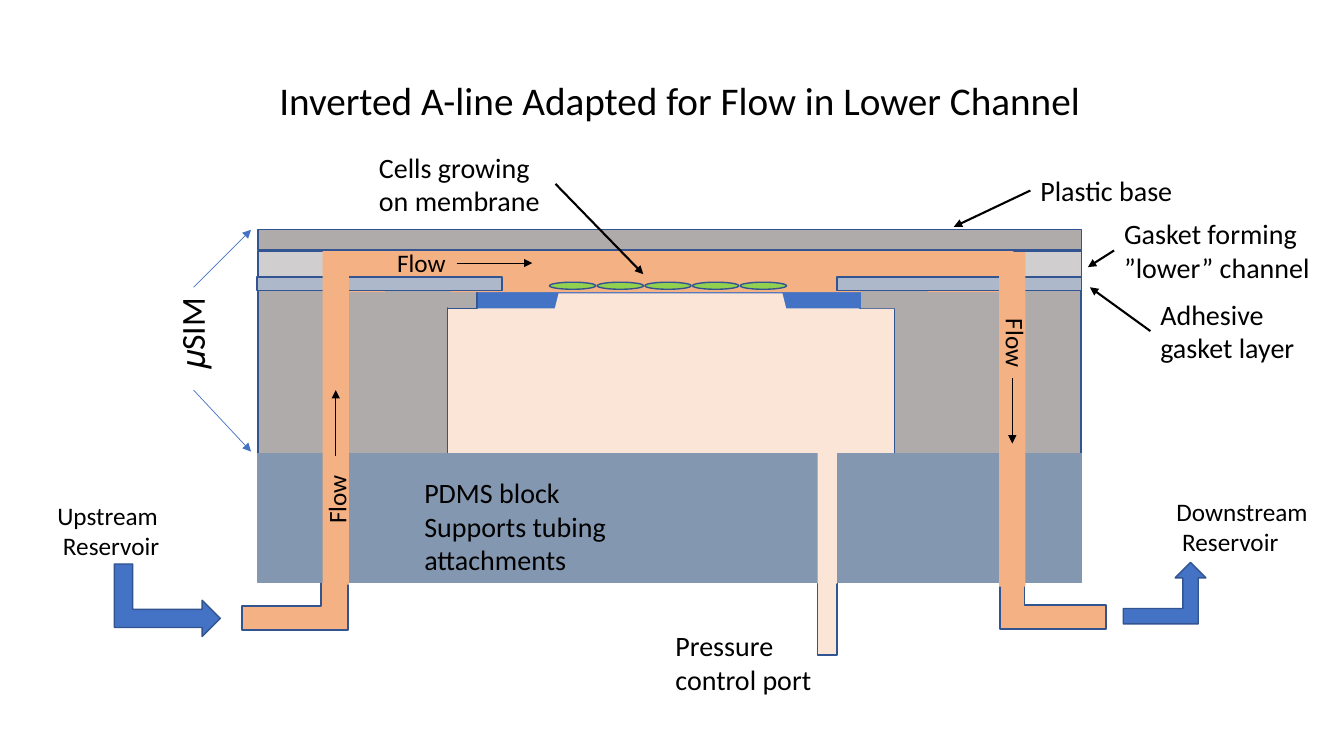
from lxml import etree
from pptx import Presentation
from pptx.dml.color import RGBColor
from pptx.enum.shapes import MSO_CONNECTOR, MSO_SHAPE
from pptx.enum.text import MSO_ANCHOR, MSO_AUTO_SIZE, PP_ALIGN
from pptx.oxml.ns import qn
from pptx.util import Inches, Pt

RECTANGLE = MSO_SHAPE.RECTANGLE
OVAL = MSO_SHAPE.OVAL
TRAPEZOID = MSO_SHAPE.TRAPEZOID
ELBOW = MSO_SHAPE.CORNER
BENT_ARROW = MSO_SHAPE.BENT_UP_ARROW
STRAIGHT = MSO_CONNECTOR.STRAIGHT
LEFT, TOP = PP_ALIGN.LEFT, MSO_ANCHOR.TOP
NO_AUTOFIT = MSO_AUTO_SIZE.NONE

CELL = 0.1
FONT = "Calibri"
BLACK = "000000"
OUTLINE = "325491"
FLUID = "F4B183"
AIR = "FBE5D6"
BODY = "AFABAB"
GASKET = "D0CECE"
ADHESIVE = "ADB9CA"
PDMS = "8497B0"
BLUE = "4472C4"
GREEN = "92D050"
LEFT_SIDE, RIGHT_SIDE = 1, 3


def grid(count):
    """Convert grid cells to a length."""
    return Inches(count * CELL)


def color(value):
    """Turn a hex string into a colour."""
    return RGBColor.from_string(value)


def add_part(slide, origin, kind, place, fill, line=None, width=1):
    """Add a filled shape at a place given in cells from the origin."""
    left, top, across, down = place
    shape = slide.shapes.add_shape(
        kind, grid(origin[0] + left), grid(origin[1] + top), grid(across), grid(down))
    shape.shadow.inherit = False
    shape.fill.solid()
    shape.fill.fore_color.rgb = color(fill)
    if line:
        shape.line.color.rgb = color(line)
        shape.line.width = Pt(width)
    else:
        shape.line.fill.background()
    return shape


def add_arrow(slide, start, end, line=BLACK, width=1.5):
    """Add a straight arrow between two grid points."""
    arrow = slide.shapes.add_connector(STRAIGHT, *map(grid, start + end))
    arrow.line.color.rgb = color(line)
    arrow.line.width = Pt(width)
    properties = arrow._element.spPr
    etree.SubElement(properties.find(qn("a:ln")), qn("a:tailEnd"), type="triangle")
    etree.SubElement(properties, qn("a:effectLst"))
    return arrow


def write_run(paragraph, text, size):
    """Append one formatted run to a paragraph."""
    run = paragraph.add_run()
    run.text = text
    run.font.name = FONT
    run.font.size = Pt(size)
    run.font.color.rgb = color(BLACK)


def add_label(slide, place, lines, size=20, rotation=0, wrap=True):
    """Add a text box with one paragraph per line."""
    box = slide.shapes.add_textbox(*map(grid, place))
    box.rotation = rotation
    frame = box.text_frame
    frame.word_wrap = wrap
    for index, text in enumerate(lines):
        paragraph = frame.add_paragraph() if index else frame.paragraphs[0]
        write_run(paragraph, text, size)
    return box


def draw_title(slide, place):
    """Move the title placeholder and write the title."""
    title = slide.shapes.title
    title.left, title.top, title.width, title.height = map(grid, place)
    frame = title.text_frame
    frame.auto_size = NO_AUTOFIT
    frame.word_wrap = False
    frame.vertical_anchor = TOP
    paragraph = frame.paragraphs[0]
    paragraph.alignment = LEFT
    paragraph.line_spacing = 1.0
    write_run(paragraph, "Inverted A-line Adapted for Flow in Lower Channel", 28)


def draw_tubing(slide, origin):
    """Draw the port and the two elbows below the chip."""
    add_part(slide, origin, RECTANGLE, (55.5, 33.5, 1.9, 8.7), AIR, OUTLINE)
    inlet = add_part(slide, origin, ELBOW, (-1.6, 34.9, 10.5, 4.8), FLUID, OUTLINE, 1.25)
    inlet.adjustments[1] = 0.553
    inlet._element.spPr.find(qn("a:xfrm")).set("flipH", "1")
    add_part(slide, origin, ELBOW, (73.6, 34.8, 10.5, 4.8), FLUID, OUTLINE, 1.25)


def draw_chip(slide, origin, width):
    """Draw the chip's cross-section from back to front."""
    inner_parts = (
        (RECTANGLE, (17, 6.2, 46.3, 17.4), AIR, None),
        (RECTANGLE, (15.1, 5.8, 6.6, 2), BODY, OUTLINE),
        (RECTANGLE, (59.7, 6.2, 3.5, 1.6), BODY, OUTLINE),
        (RECTANGLE, (21.8, 5.8, 38.1, 2), BLUE, None),
        (TRAPEZOID, (29.3, 6.3, 23.2, 2), AIR, None),
        (RECTANGLE, (63.1, 6, 18.5, 16.2), BODY, OUTLINE),
        (RECTANGLE, (0, 5.2, 18.8, 17), BODY, OUTLINE),
        (RECTANGLE, (0, 2.1, width, 2.6), GASKET, OUTLINE),
        (RECTANGLE, (7.8, 1.8, 67.1, 4.4), FLUID, None),
    )
    cells = tuple((OVAL, (28.9 + 4.73 * index, 5.2, 4.6, 0.7), GREEN, OUTLINE)
                  for index in range(5))
    outer_parts = (
        (RECTANGLE, (59.8, 6, 6.6, 1.8), BODY, None),
        (RECTANGLE, (12.6, 5.3, 6.5, 2.4), BODY, None),
        (RECTANGLE, (0, 22.2, width, 12.8), PDMS, PDMS),
        (RECTANGLE, (55.5, 22.1, 1.9, 13), AIR, None),
        (RECTANGLE, (-0.1, 4.7, 24.3, 1.3), ADHESIVE, OUTLINE),
        (RECTANGLE, (6.4, 2, 2.6, 33.2), FLUID, None),
        (RECTANGLE, (0, 0, width, 2), BODY, OUTLINE),
        (RECTANGLE, (width - 24.3, 4.7, 24.3, 1.3), ADHESIVE, OUTLINE),
        (RECTANGLE, (73.5, 2.2, 2.6, 33.2), FLUID, None),
    )
    for kind, place, fill, line in inner_parts + cells + outer_parts:
        add_part(slide, origin, kind, place, fill, line)


def draw_reservoirs(slide, origin):
    """Draw the reservoir labels and their bent arrows."""
    inflow = add_part(slide, origin, BENT_ARROW, (-12.6, 31.5, 7.2, 10.5), BLUE, OUTLINE)
    inflow.rotation = 90
    add_part(slide, origin, BENT_ARROW, (85.8, 33, 8.2, 6.1), BLUE, OUTLINE)
    left, top = origin
    for name, across, down, width in (("Upstream", -20.9, 26.3, 12.5),
                                      ("Downstream", 90.1, 25.9, 16.2)):
        add_label(slide, (left + across, top + down, width, 7.1), (name, " Reservoir"), 18)


def draw_callouts(slide):
    """Label the layers and join each label to its arrow."""
    callouts = (
        ("Cells growing on membrane", (36.6, 14.4, 18.5, 7.7), RIGHT_SIDE, (63.8, 27.2)),
        ("Gasket forming ”lower” channel", (110.5, 21, 21.2, 7.7), LEFT_SIDE, (107.9, 26.5)),
        ("Plastic base", (102.2, 16.7, 18.5, 4.4), LEFT_SIDE, (94.6, 22.5)),
        ("Adhesive gasket layer", (114.1, 29, 16.1, 7.7), LEFT_SIDE, (108.1, 28.5)),
    )
    for text, place, side, target in callouts:
        label = add_label(slide, place, (text,))
        arrow = add_arrow(slide, place[:2], target)
        arrow.begin_connect(label, side)
    add_label(slide, (41.1, 46.7, 23.3, 11.1), ("PDMS block", "Supports tubing attachments"))
    add_label(slide, (66, 61.9, 17.2, 7.7), ("Pressure control port",))


def draw_flow(slide):
    """Mark the direction of flow along the channel."""
    flows = (
        ((97.3, 32.1), 90, (100.4, 37.5), (100.4, 44)),
        ((38.4, 24), 0, (45.3, 26.1), (52.8, 26.1)),
        ((29.9, 47.5), 270, (33.3, 45.2), (33.3, 38.7)),
    )
    for corner, rotation, start, end in flows:
        add_label(slide, corner + (6.9, 4), ("Flow",), 18, rotation, wrap=False)
        add_arrow(slide, start, end, width=0.5)


def draw_height_mark(slide, left, right):
    """Mark the height of the device with two arrows and its name."""
    add_arrow(slide, (left, 28.5), (right, 22.8), BLUE, 0.5)
    add_arrow(slide, (left, 38.7), (right, 44.8), BLUE, 0.5)
    add_label(slide, (left - 5.2, 30.1, 10, 5), ("𝜇SIM",), 24, 270)


def main():
    """Build and save the presentation."""
    presentation = Presentation()
    presentation.slide_width = Inches(13.33)
    presentation.slide_height = Inches(7.5)
    slide = presentation.slides.add_slide(presentation.slide_layouts[5])
    chip_origin = (25.6, 22.8)
    draw_title(slide, (26.7, 7.1, 81.9, 5.7))
    draw_tubing(slide, chip_origin)
    draw_chip(slide, chip_origin, 81.7)
    draw_reservoirs(slide, chip_origin)
    draw_callouts(slide)
    draw_flow(slide)
    draw_height_mark(slide, 19.2, 24.9)
    presentation.save("out.pptx")


if __name__ == "__main__":
    main()
